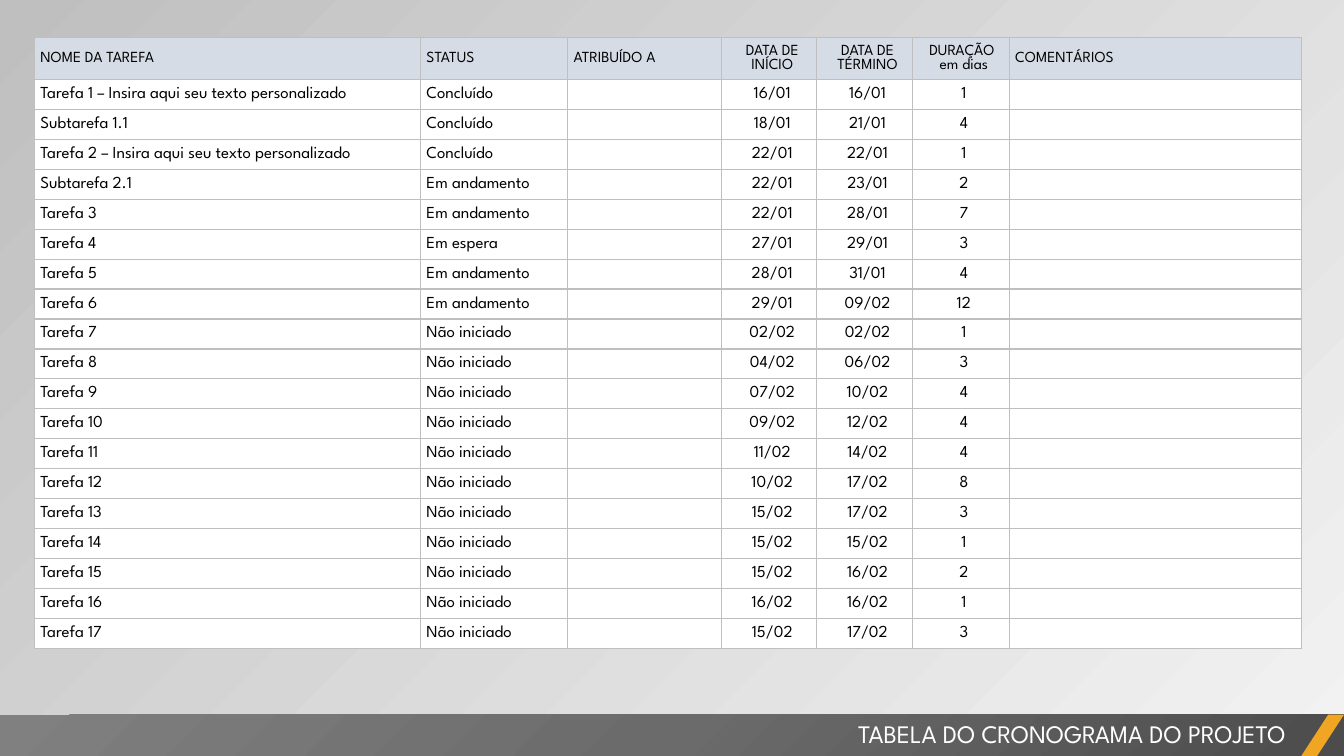
from lxml.etree import SubElement
from pptx import Presentation
from pptx.dml.color import RGBColor
from pptx.enum.shapes import MSO_SHAPE as Shape
from pptx.enum.text import MSO_ANCHOR as Anchor, PP_ALIGN as Align
from pptx.oxml.ns import qn
from pptx.util import Inches, Pt

WIDTH, HEIGHT = 13.33, 7.5
FONT = "League Spartan"
BLACK = RGBColor(0x00, 0x00, 0x00)
WHITE = RGBColor(0xFF, 0xFF, 0xFF)
HEADER_BLUE = RGBColor(0xD6, 0xDC, 0xE5)
GRID_GRAY = RGBColor(0xBF, 0xBF, 0xBF)
PALE_GRAY = RGBColor(0xF2, 0xF2, 0xF2)
BAR_DARK = RGBColor(0x4C, 0x4C, 0x4C)
BAR_MIDDLE = RGBColor(0x6B, 0x6B, 0x6B)
BAR_LIGHT = RGBColor(0x80, 0x80, 0x80)
ORANGE = RGBColor(0xF0, 0xA6, 0x22)

TABLE_LEFT, TABLE_TOP = 0.34, 0.37
COLUMN_WIDTHS = [3.83, 1.46, 1.53, 0.94, 0.95, 0.96, 2.9]
CENTERED_COLUMNS = {3, 4, 5}
HEADER_HEIGHT, ROW_HEIGHT = 0.42, 0.297
BAR_HEIGHT = 0.42
BAR_TOP = HEIGHT - BAR_HEIGHT + 0.01

HEADERS = ["NOME DA TAREFA", "STATUS", "ATRIBUÍDO A", "DATA DE INÍCIO",
           "DATA DE TÉRMINO", "DURAÇÃO \nem dias", "COMENTÁRIOS"]
DONE, ACTIVE, WAITING, NOT_STARTED = (
    "Concluído", "Em andamento", "Em espera", "Não iniciado")
TASKS = [
    ("Tarefa 1 – Insira aqui seu texto personalizado", DONE, "16/01", "16/01", 1),
    ("Subtarefa 1.1", DONE, "18/01", "21/01", 4),
    ("Tarefa 2 – Insira aqui seu texto personalizado", DONE, "22/01", "22/01", 1),
    ("Subtarefa 2.1", ACTIVE, "22/01", "23/01", 2),
    ("Tarefa 3", ACTIVE, "22/01", "28/01", 7),
    ("Tarefa 4", WAITING, "27/01", "29/01", 3),
    ("Tarefa 5", ACTIVE, "28/01", "31/01", 4),
    ("Tarefa 6", ACTIVE, "29/01", "09/02", 12),
    ("Tarefa 7", NOT_STARTED, "02/02", "02/02", 1),
    ("Tarefa 8", NOT_STARTED, "04/02", "06/02", 3),
    ("Tarefa 9", NOT_STARTED, "07/02", "10/02", 4),
    ("Tarefa 10", NOT_STARTED, "09/02", "12/02", 4),
    ("Tarefa 11", NOT_STARTED, "11/02", "14/02", 4),
    ("Tarefa 12", NOT_STARTED, "10/02", "17/02", 8),
    ("Tarefa 13", NOT_STARTED, "15/02", "17/02", 3),
    ("Tarefa 14", NOT_STARTED, "15/02", "15/02", 1),
    ("Tarefa 15", NOT_STARTED, "15/02", "16/02", 2),
    ("Tarefa 16", NOT_STARTED, "16/02", "16/02", 1),
    ("Tarefa 17", NOT_STARTED, "15/02", "17/02", 3),
]


def write_text(frame, text, size=12, color=BLACK, align=Align.LEFT):
    for index, line in enumerate(text.split("\n")):
        paragraph = frame.add_paragraph() if index else frame.paragraphs[0]
        paragraph.alignment = align
        if line:
            run = paragraph.add_run()
            run.text = line
            run.font.name, run.font.size = FONT, Pt(size)
            run.font.color.rgb = color
        else:
            # An empty cell keeps its row low only if its end mark is small.
            SubElement(paragraph._p, qn("a:endParaRPr"), sz=str(size * 100))


def set_gradient(fill, owner, stops, angle=None):
    """Fill with (position, colour, opacity) stops, linear at an angle or
    else circular from the bottom right corner."""
    fill.gradient()
    gradient = next(owner.iter(qn("a:gradFill")))
    for child in list(gradient):
        gradient.remove(child)
    stop_list = SubElement(gradient, qn("a:gsLst"))
    for position, color, opacity in stops:
        stop = SubElement(stop_list, qn("a:gs"), pos=str(position * 1000))
        rgb = SubElement(stop, qn("a:srgbClr"), val=str(color))
        if opacity < 100:
            SubElement(rgb, qn("a:alpha"), val=str(opacity * 1000))
    if angle is not None:
        SubElement(gradient, qn("a:lin"), ang=str(angle * 60000), scaled="0")
    else:
        circle = SubElement(gradient, qn("a:path"), path="circle")
        SubElement(circle, qn("a:fillToRect"), l="100000", t="100000")


def add_borders(cell):
    properties = cell._tc.get_or_add_tcPr()
    for side in ("lnL", "lnR", "lnT", "lnB"):
        line = SubElement(properties, qn(f"a:{side}"), w=str(Pt(1)))
        solid = SubElement(line, qn("a:solidFill"))
        SubElement(solid, qn("a:srgbClr"), val=str(GRID_GRAY))


def fill_cell(cell, text, color, size, align):
    add_borders(cell)
    cell.fill.solid()
    cell.fill.fore_color.rgb = color
    cell.vertical_anchor = Anchor.MIDDLE
    cell.margin_left = Inches(0.06)
    cell.margin_right = cell.margin_top = cell.margin_bottom = 0
    write_text(cell.text_frame, text, size=size, align=align)


def add_schedule(slide):
    rows = [HEADERS] + [(name, status, "", start, end, str(days), "")
                        for name, status, start, end, days in TASKS]
    table_height = HEADER_HEIGHT + ROW_HEIGHT * len(TASKS)
    table = slide.shapes.add_table(
        len(rows), len(HEADERS), Inches(TABLE_LEFT), Inches(TABLE_TOP),
        Inches(sum(COLUMN_WIDTHS)), Inches(table_height)).table
    table.first_row = table.horz_banding = False
    for column, width in zip(table.columns, COLUMN_WIDTHS):
        column.width = Inches(width)
    for r, texts in enumerate(rows):
        table.rows[r].height = Inches(ROW_HEIGHT if r else HEADER_HEIGHT)
        color, size = (WHITE, 12) if r else (HEADER_BLUE, 11)
        for c, text in enumerate(texts):
            align = Align.CENTER if c in CENTERED_COLUMNS else Align.LEFT
            fill_cell(table.cell(r, c), text, color, size, align)


def add_bar_shape(slide, kind, left, width):
    shape = slide.shapes.add_shape(
        kind, Inches(left), Inches(BAR_TOP), Inches(width), Inches(BAR_HEIGHT))
    shape.shadow.inherit = False
    shape.line.fill.background()
    return shape


def add_title_bar(slide):
    bar = add_bar_shape(slide, Shape.RECTANGLE, 0, WIDTH)
    set_gradient(bar.fill, bar._element, [
        (0, BAR_DARK, 100), (50, BAR_MIDDLE, 100), (100, BAR_LIGHT, 100)])
    accent_width = 0.43
    accent = add_bar_shape(
        slide, Shape.PARALLELOGRAM, WIDTH - accent_width, accent_width)
    accent.adjustments[0] = 0.65
    accent.fill.solid()
    accent.fill.fore_color.rgb = ORANGE
    title = slide.shapes.add_textbox(
        Inches(5.25), Inches(BAR_TOP - 0.01), Inches(7.6), Inches(0.4))
    title.text_frame.word_wrap = True
    write_text(title.text_frame, "TABELA DO CRONOGRAMA DO PROJETO",
               size=18, color=WHITE, align=Align.RIGHT)


def main():
    presentation = Presentation()
    presentation.slide_width = Inches(WIDTH)
    presentation.slide_height = Inches(HEIGHT)
    slide = presentation.slides.add_slide(presentation.slide_layouts[6])
    set_gradient(slide.background.fill, slide._element,
                 [(0, PALE_GRAY, 40), (100, GRID_GRAY, 100)], angle=225)
    add_schedule(slide)
    add_title_bar(slide)
    presentation.save("out.pptx")


if __name__ == "__main__":
    main()
